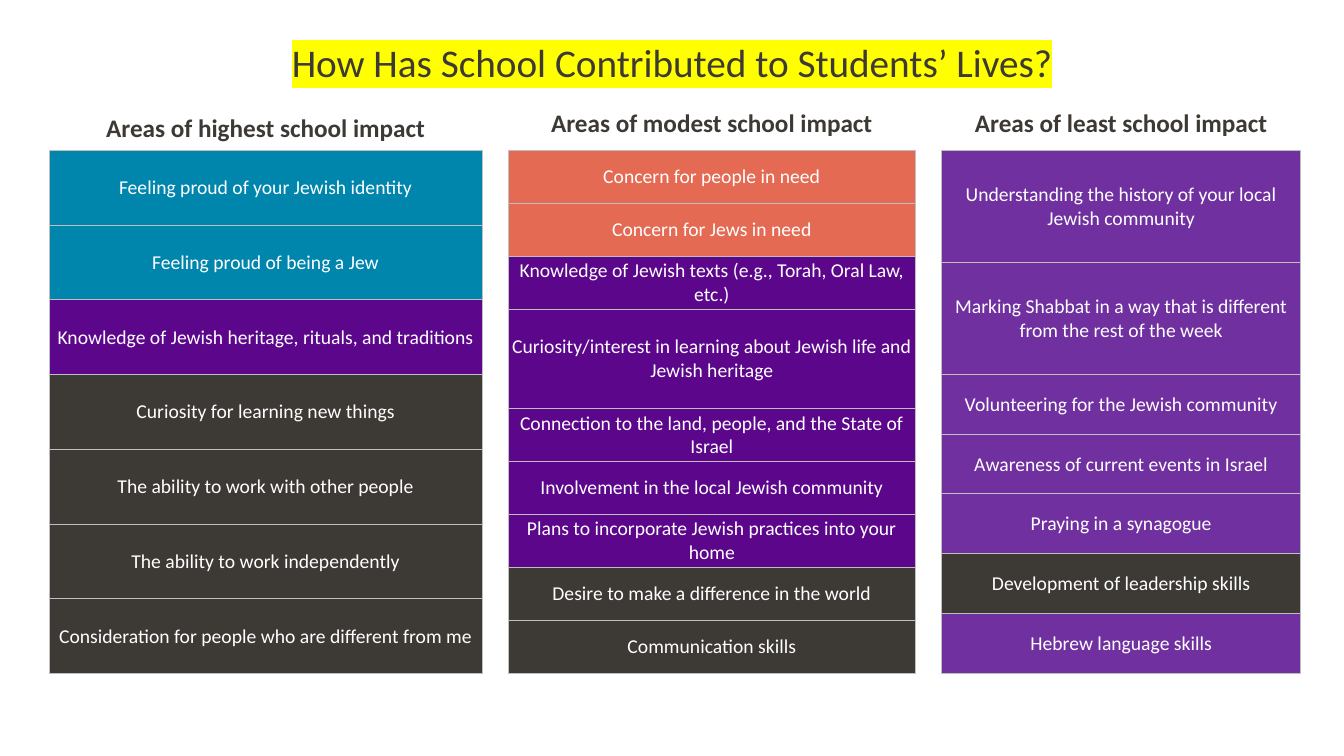
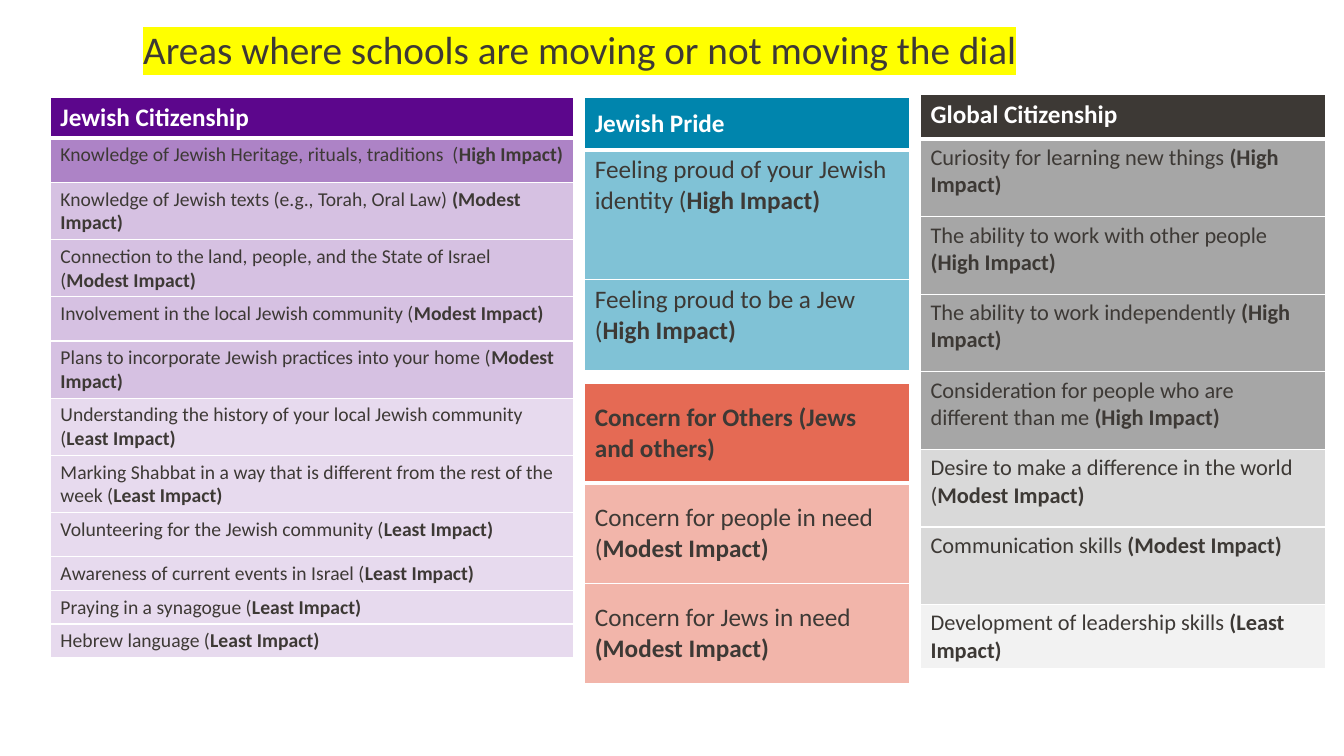
from lxml import etree
from pptx import Presentation
from pptx.dml.color import RGBColor
from pptx.enum.text import MSO_ANCHOR as ANCHOR, PP_ALIGN as ALIGN
from pptx.oxml.ns import qn
from pptx.util import Inches, Pt

FONT = "Calibri"
WHITE = RGBColor(0xFF, 0xFF, 0xFF)
DARK = RGBColor(0x3D, 0x39, 0x35)
RULE = RGBColor(0xBF, 0xBF, 0xBF)
YELLOW = RGBColor(0xFF, 0xFF, 0x00)
TEAL = RGBColor(0x00, 0x85, 0xAD)
TEAL_LIGHT = RGBColor(0x80, 0xC2, 0xD6)
CORAL = RGBColor(0xE5, 0x6A, 0x54)
CORAL_LIGHT = RGBColor(0xF2, 0xB5, 0xAA)
PURPLE = RGBColor(0x5C, 0x06, 0x8C)
VIOLET = RGBColor(0x70, 0x30, 0xA0)
PURPLE_HIGH = RGBColor(0xAD, 0x83, 0xC6)
PURPLE_MODEST = RGBColor(0xD6, 0xC1, 0xE2)
PURPLE_LEAST = RGBColor(0xE7, 0xDA, 0xEE)
GREY_HIGH = RGBColor(0xA6, 0xA6, 0xA6)
GREY_MODEST = RGBColor(0xD9, 0xD9, 0xD9)
GREY_LEAST = RGBColor(0xF2, 0xF2, 0xF2)

prs = Presentation()
prs.slide_width, prs.slide_height = Inches(13.33), Inches(7.5)
COL, ROW = prs.slide_width / 100, prs.slide_height / 100


def add_label(s, text, x, y, w, h, size, bold=False, highlight=None):
    tf = s.shapes.add_textbox(int(x * COL), int(y * ROW), int(w * COL), int(h * ROW)).text_frame
    tf.word_wrap = True
    tf.vertical_anchor = ANCHOR.MIDDLE
    p = tf.paragraphs[0]
    p.alignment = ALIGN.CENTER
    p.font.name, p.font.size, p.font.bold = FONT, Pt(size), bold
    p.font.color.rgb = DARK
    r = p.add_run()
    r.text = text
    if highlight:
        p.line_spacing = 0.9
        mark = etree.SubElement(r.font._element, qn("a:highlight"))
        etree.SubElement(mark, qn("a:srgbClr"), val=str(highlight))


def add_grid(s, x, y, w, h, weights, rows, size, rule, rule_width,
             header=None, anchor=ANCHOR.TOP, align=ALIGN.LEFT, inset=None):
    frame = s.shapes.add_table(len(rows), 1, int(x * COL), int(y * ROW), int(w * COL), int(h * ROW))
    table = frame.table
    table.first_row = table.horz_banding = False
    for i, (text, fill, color) in enumerate(rows):
        table.rows[i].height = int(h * ROW * weights[i] / sum(weights))
        cell = table.cell(i, 0)
        is_header = header is not None and i == 0
        cell.vertical_anchor = header if is_header else anchor
        if inset is not None:
            cell.margin_left = cell.margin_right = cell.margin_top = inset
            cell.margin_bottom = 0
        cell.fill.solid()
        cell.fill.fore_color.rgb = fill
        p = cell.text_frame.paragraphs[0]
        p.alignment = align
        p.font.name, p.font.size = FONT, Pt(18 if is_header else size)
        p.font.color.rgb = color
        for j, part in enumerate(text.split("|")):
            r = p.add_run()
            r.text = part
            r.font.bold = is_header or j == 1
        for k, side in enumerate(("lnL", "lnR", "lnT", "lnB")):
            thick = header is not None and (i, side) in ((0, "lnB"), (1, "lnT"))
            ln = etree.Element(qn(f"a:{side}"), w=str(Pt(3 if thick else rule_width)))
            etree.SubElement(etree.SubElement(ln, qn("a:solidFill")), qn("a:srgbClr"), val=str(rule))
            cell._tc.get_or_add_tcPr().insert(k, ln)


s = prs.slides.add_slide(prs.slide_layouts[6])
add_label(s, "How Has School Contributed to Students’ Lives?", 0, 2.53, 100, 12.13, 28, highlight=YELLOW)

impact_columns = [
    ("Areas of highest school impact", 14.13, 32.18, [1] * 7, [
        ("Feeling proud of your Jewish identity", TEAL),
        ("Feeling proud of being a Jew", TEAL),
        ("Knowledge of Jewish heritage, rituals, and traditions", PURPLE),
        ("Curiosity for learning new things", DARK),
        ("The ability to work with other people", DARK),
        ("The ability to work independently", DARK),
        ("Consideration for people who are different from me", DARK),
    ]),
    ("Areas of modest school impact", 13.47, 30.31, [1] * 3 + [1.87] + [1] * 5, [
        ("Concern for people in need", CORAL),
        ("Concern for Jews in need", CORAL),
        ("Knowledge of Jewish texts (e.g., Torah, Oral Law, etc.)", PURPLE),
        ("Curiosity/interest in learning about Jewish life and Jewish heritage", PURPLE),
        ("Connection to the land, people, and the State of Israel", PURPLE),
        ("Involvement in the local Jewish community", PURPLE),
        ("Plans to incorporate Jewish practices into your home", PURPLE),
        ("Desire to make a difference in the world", DARK),
        ("Communication skills", DARK),
    ]),
    ("Areas of least school impact", 13.47, 26.71, [1.87] * 2 + [1] * 5, [
        ("Understanding the history of your local Jewish community", VIOLET),
        ("Marking Shabbat in a way that is different from the rest of the week", VIOLET),
        ("Volunteering for the Jewish community", VIOLET),
        ("Awareness of current events in Israel", VIOLET),
        ("Praying in a synagogue", VIOLET),
        ("Development of leadership skills", DARK),
        ("Hebrew language skills", VIOLET),
    ]),
]
x = 3.68
for heading, y, w, weights, areas in impact_columns:
    add_label(s, heading, x, y, w, 5.33, 18, bold=True)
    add_grid(s, x, 19.87, w, 69.2, weights, [(text, fill, WHITE) for text, fill in areas], 14, RULE, 0.5,
             anchor=ANCHOR.MIDDLE, align=ALIGN.CENTER, inset=Inches(0.01))
    x += w + 1.95

s = prs.slides.add_slide(prs.slide_layouts[6])
add_label(s, "Areas where schools are moving or not moving the dial", 0, 0.8, 86.27, 12.13, 28, highlight=YELLOW)

TOP, MID = ANCHOR.TOP, ANCHOR.MIDDLE
dial_tables = [
    (43.51, 12.93, 24.16, 36.13, [4, 10, 7], 18, MID, TOP, ("Jewish Pride", TEAL, WHITE), [
        ("Feeling proud of your Jewish identity (|High Impact)", TEAL_LIGHT),
        ("Feeling proud to be a Jew (|High Impact)", TEAL_LIGHT),
    ]),
    (3.75, 12.93, 38.93, 61.47, [7] + [10] * 8 + [6] * 3, 14, TOP, TOP, ("Jewish Citizenship", PURPLE, WHITE), [
        ("Knowledge of Jewish Heritage, rituals, traditions  (|High Impact)", PURPLE_HIGH),
        ("Knowledge of Jewish texts (e.g., Torah, Oral Law) |(Modest Impact)", PURPLE_MODEST),
        ("Connection to the land, people, and the State of Israel (|Modest Impact)", PURPLE_MODEST),
        ("Involvement in the local Jewish community (|Modest Impact)", PURPLE_MODEST),
        ("Plans to incorporate Jewish practices into your home (|Modest Impact)", PURPLE_MODEST),
        ("Understanding the history of your local Jewish community (|Least Impact)", PURPLE_LEAST),
        ("Marking Shabbat in a way that is different from the rest of the week (|Least Impact)", PURPLE_LEAST),
        ("Volunteering for the Jewish community (|Least Impact)", PURPLE_LEAST),
        ("Awareness of current events in Israel (|Least Impact)", PURPLE_LEAST),
        ("Praying in a synagogue (|Least Impact)", PURPLE_LEAST),
        ("Hebrew language (|Least Impact)", PURPLE_LEAST),
    ]),
    (43.51, 50.67, 24.16, 39.73, [1] * 3, 18, MID, MID, ("Concern for Others (Jews and others)", CORAL, DARK), [
        ("Concern for people in need (|Modest Impact)", CORAL_LIGHT),
        ("Concern for Jews in need |(Modest Impact)", CORAL_LIGHT),
    ]),
    (68.49, 12.53, 30.16, 73.33, [4] + [7] * 6 + [4], 16, TOP, TOP, ("Global Citizenship", DARK, WHITE), [
        ("Curiosity for learning new things |(High Impact)", GREY_HIGH),
        ("The ability to work with other people |(High Impact)", GREY_HIGH),
        ("The ability to work independently |(High Impact)", GREY_HIGH),
        ("Consideration for people who are different than me |(High Impact)", GREY_HIGH),
        ("Desire to make a difference in the world (|Modest Impact)", GREY_MODEST),
        ("Communication skills |(Modest Impact)", GREY_MODEST),
        ("Development of leadership skills |(Least Impact)", GREY_LEAST),
    ]),
]
for x, y, w, h, weights, size, header, anchor, title, areas in dial_tables:
    rows = [title] + [(text, fill, DARK) for text, fill in areas]
    add_grid(s, x, y, w, h, weights, rows, size, WHITE, 1, header=header, anchor=anchor)

prs.save("out.pptx")
